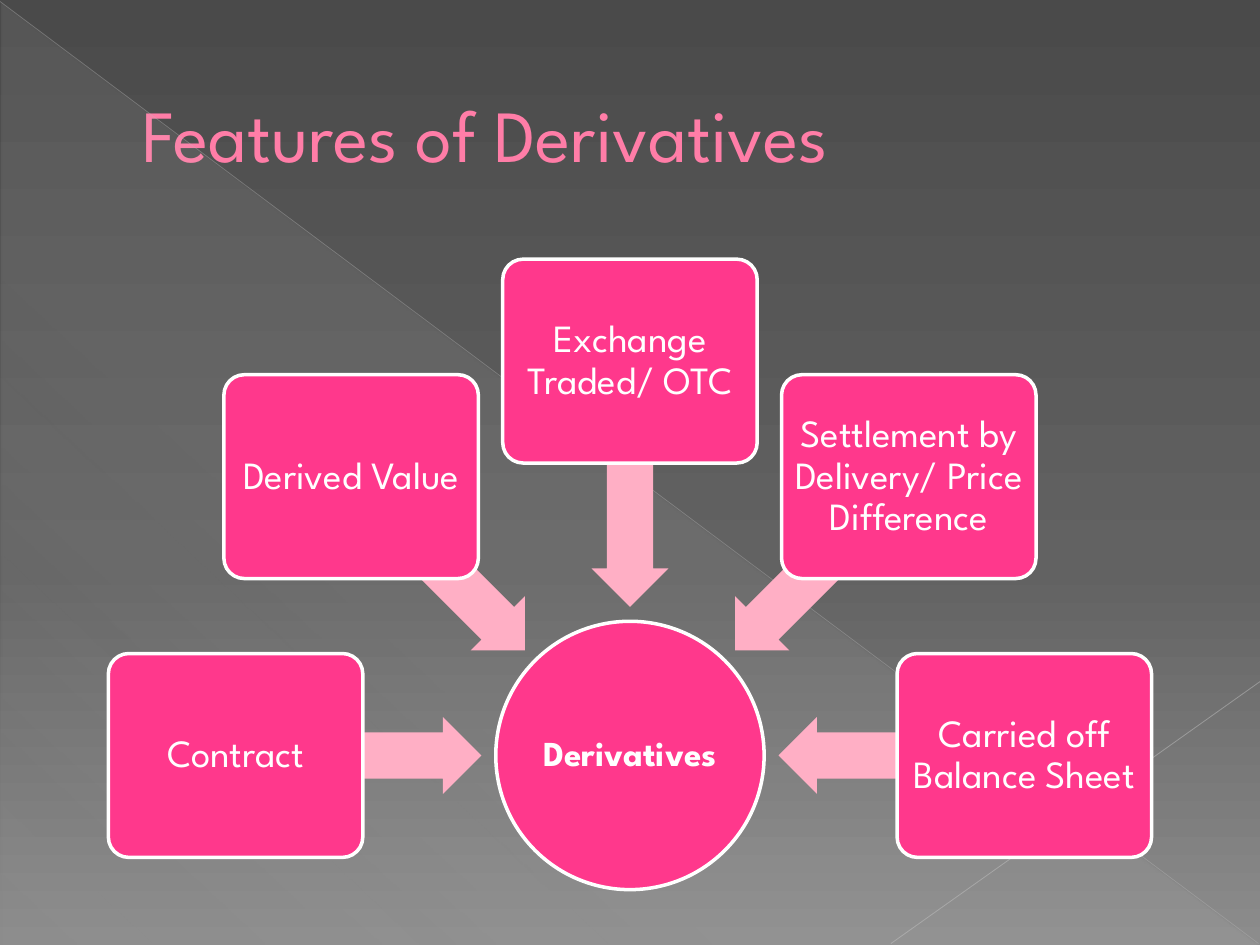
from math import cos, radians, sin

from lxml import etree
from pptx import Presentation
from pptx.dml.color import RGBColor
from pptx.enum.shapes import MSO_CONNECTOR, MSO_SHAPE
from pptx.enum.text import MSO_ANCHOR, MSO_AUTO_SIZE, PP_ALIGN
from pptx.oxml.ns import qn
from pptx.util import Cm, Pt

STRAIGHT = MSO_CONNECTOR.STRAIGHT
TRIANGLE = MSO_SHAPE.RIGHT_TRIANGLE
ELLIPSE = MSO_SHAPE.OVAL
ROUNDED = MSO_SHAPE.ROUNDED_RECTANGLE
LEFT_ARROW = MSO_SHAPE.LEFT_ARROW
MIDDLE = MSO_ANCHOR.MIDDLE
NO_FIT = MSO_AUTO_SIZE.NONE
CENTER, LEFT = PP_ALIGN.CENTER, PP_ALIGN.LEFT

COLORS = {
    "title": "FF7DA7",
    "title_outline": "B12761",
    "node": "FF388C",
    "arrow": "FFAFC5",
    "white": "FFFFFF",
    "top": "4A4A4A",
    "middle": "626262",
    "bottom": "8C8C8C",
    "sheen": "D2D2D2",
    "diagonal": "BFBFBF",
    "corner": "C6C6C6",
}
FEATURES = [
    "Contract",
    "Derived Value",
    "Exchange Traded/ OTC",
    "Settlement by Delivery/ Price Difference",
    "Carried off Balance Sheet",
]
HUB_X, HUB_Y, HUB_SIZE = 12.7, 15.23, 5.41
BOX_ORBIT, BOX_WIDTH, BOX_HEIGHT = 7.95, 5.13, 4.11
ARROW_ORBIT, ARROW_LENGTH, ARROW_THICKNESS = 5.47, 4.95, 1.55


def rgb(name):
    return RGBColor.from_string(COLORS[name])


def add_alpha(color_element, percent):
    etree.SubElement(color_element, qn("a:alpha"), val=str(percent * 1000))


class SlideBuilder:
    font = "League Spartan"
    node_line = Pt(2)

    def __init__(self, slide):
        self.slide = slide

    def set_gradient(self, gradient, stops, angle):
        stop_list = gradient.find(qn("a:gsLst"))
        for stop in list(stop_list):
            stop_list.remove(stop)
        for position, name, opacity in stops:
            stop = etree.SubElement(stop_list, qn("a:gs"), pos=str(position * 1000))
            color = etree.SubElement(stop, qn("a:srgbClr"), val=COLORS[name])
            add_alpha(color, opacity)
        gradient.find(qn("a:lin")).set("ang", str(angle * 60000))

    def background(self, stops, angle):
        self.slide.background.fill.gradient()
        gradient = self.slide.element.xpath("./p:cSld/p:bg//a:gradFill")[0]
        self.set_gradient(gradient, stops, angle)

    def shape(self, kind, center_x, center_y, width, height):
        shape = self.slide.shapes.add_shape(
            kind, Cm(center_x - width / 2), Cm(center_y - height / 2), Cm(width), Cm(height)
        )
        shape.shadow.inherit = False
        shape.line.fill.background()
        return shape

    def sheen(self, center_x, center_y, width, height, stops, angle):
        shape = self.shape(TRIANGLE, center_x, center_y, width, height)
        shape.fill.gradient()
        self.set_gradient(shape.element.xpath("./p:spPr/a:gradFill")[0], stops, angle)

    def line(self, start, end, color, width, opacity):
        connector = self.slide.shapes.add_connector(
            STRAIGHT, *(Cm(value) for value in (*start, *end))
        )
        connector.line.color.rgb = rgb(color)
        connector.line.width = Pt(width)
        properties = connector.element.spPr
        add_alpha(properties.xpath("./a:ln/a:solidFill/a:srgbClr")[0], opacity)
        etree.SubElement(properties, qn("a:effectLst"))

    def style_text(self, paragraph, size, color, alignment):
        paragraph.alignment = alignment
        paragraph.font.name = self.font
        paragraph.font.size = Pt(size)
        paragraph.font.color.rgb = rgb(color)

    def title(self, text, left, top, width, height, indent):
        title = self.slide.shapes.title
        title.left, title.top = Cm(left), Cm(top)
        title.width, title.height = Cm(width), Cm(height)
        frame = title.text_frame
        frame.text = text
        frame.auto_size = NO_FIT
        frame.vertical_anchor = MIDDLE
        paragraph = frame.paragraphs[0]
        self.style_text(paragraph, 42, "title", LEFT)
        paragraph._p.get_or_add_pPr().set("marL", str(Cm(indent)))
        run_properties = paragraph.runs[0]._r.get_or_add_rPr()
        outline = etree.SubElement(run_properties, qn("a:ln"), w=str(Pt(0.5)))
        fill = etree.SubElement(outline, qn("a:solidFill"))
        etree.SubElement(fill, qn("a:srgbClr"), val=COLORS["title_outline"])

    def node(self, kind, text, center_x, center_y, width, height, size, inset, bold=False):
        shape = self.shape(kind, center_x, center_y, width, height)
        if kind == ROUNDED:
            shape.adjustments[0] = 0.1
        shape.fill.solid()
        shape.fill.fore_color.rgb = rgb("node")
        shape.line.color.rgb = rgb("white")
        shape.line.width = self.node_line
        frame = shape.text_frame
        frame.text = text
        frame.word_wrap = True
        frame.vertical_anchor = MIDDLE
        frame.margin_left = frame.margin_right = Cm(inset)
        frame.margin_top = frame.margin_bottom = Cm(inset)
        paragraph = frame.paragraphs[0]
        self.style_text(paragraph, size, "white", CENTER)
        paragraph.font.bold = bold
        paragraph.line_spacing = 0.9

    def arrow(self, center_x, center_y, rotation):
        shape = self.shape(LEFT_ARROW, center_x, center_y, ARROW_LENGTH, ARROW_THICKNESS)
        shape.adjustments[0] = 0.6
        shape.adjustments[1] = 0.5
        shape.rotation = rotation
        shape.fill.solid()
        shape.fill.fore_color.rgb = rgb("arrow")


def around_hub(orbit, angle):
    return (
        HUB_X + orbit * cos(radians(angle)),
        HUB_Y + orbit * sin(radians(angle)),
    )


def main():
    presentation = Presentation()
    presentation.slide_width, presentation.slide_height = Cm(25.4), Cm(19.05)
    builder = SlideBuilder(presentation.slides.add_slide(presentation.slide_layouts[5]))

    builder.background([(0, "top", 100), (60, "middle", 100), (100, "bottom", 100)], 90)
    builder.sheen(
        12.7, 9.55, 25.35, 19,
        [(0, "sheen", 10), (70, "sheen", 8), (100, "sheen", 1)], 133,
    )
    builder.line((0, 0.03), (25.37, 19.02), "diagonal", 0.39, 35)
    builder.line((25.4, 13.74), (17.96, 19.02), "corner", 0.47, 45)
    builder.title("Features of Derivatives", 1.27, 0.74, 22.86, 3.89, 1.35)

    builder.node(
        ELLIPSE, "Derivatives", HUB_X, HUB_Y, HUB_SIZE, HUB_SIZE, 20, 0.03, bold=True
    )
    for index, feature in enumerate(FEATURES):
        angle = 180 + 45 * index
        builder.arrow(*around_hub(ARROW_ORBIT, angle), angle % 360)
        builder.node(
            ROUNDED, feature, *around_hub(BOX_ORBIT, angle), BOX_WIDTH, BOX_HEIGHT, 22, 0.12
        )

    presentation.save("out.pptx")


if __name__ == "__main__":
    main()
